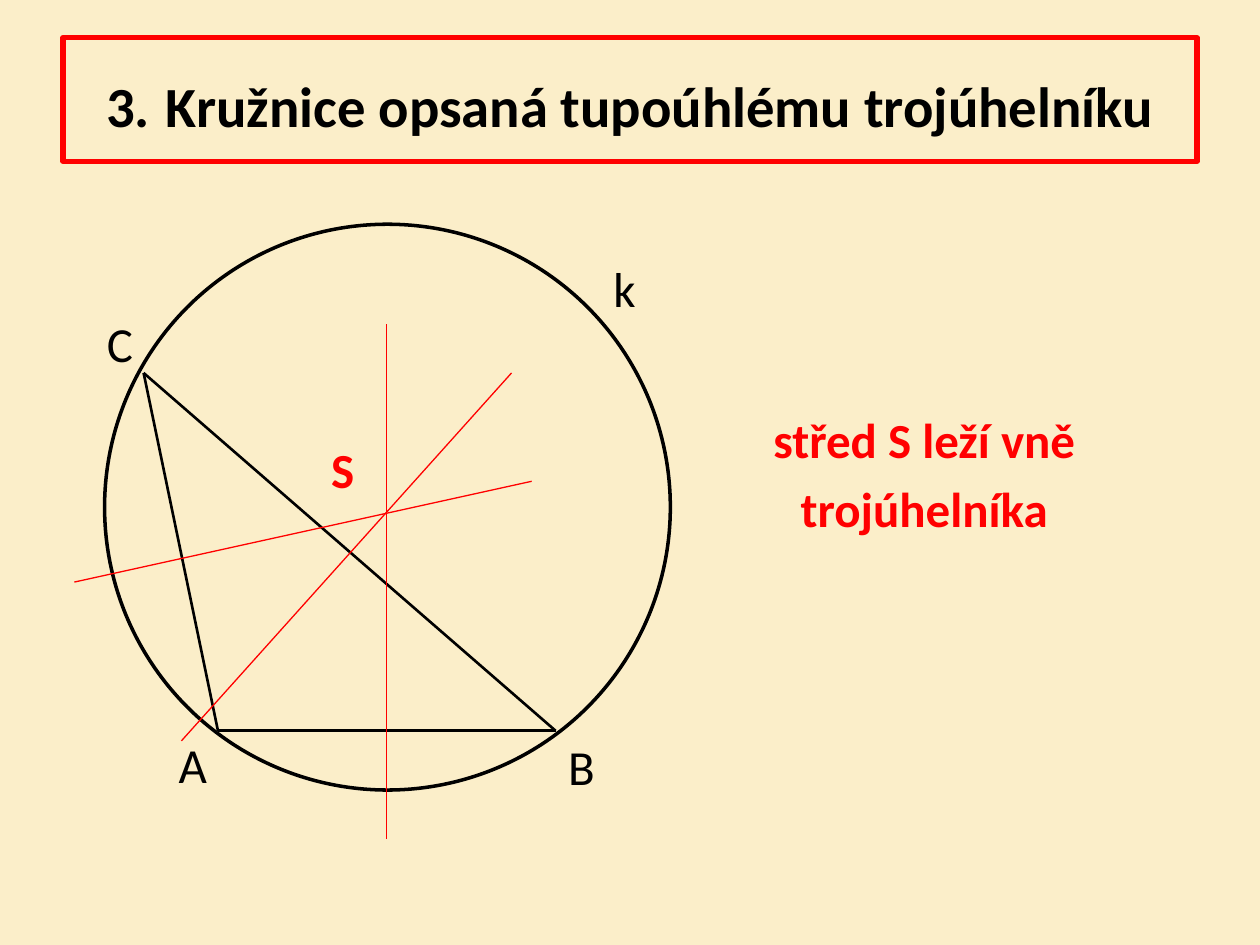
"""Build a slide on the circle circumscribed about an obtuse triangle."""
from typing import NamedTuple

from lxml.etree import SubElement
from pptx import Presentation
from pptx.dml.color import RGBColor
from pptx.enum.shapes import MSO_CONNECTOR, MSO_SHAPE
from pptx.enum.text import MSO_ANCHOR, MSO_AUTO_SIZE, PP_ALIGN
from pptx.oxml.ns import qn
from pptx.util import Inches, Pt

COLORS = {"paper": "FBEEC9", "ink": "000000", "accent": "FF0000"}
FONT = "Calibri"


class Point(NamedTuple):
    x: float
    y: float


class Segment(NamedTuple):
    start: Point
    end: Point
    color: str
    weight: float


class Label(NamedTuple):
    lines: tuple[str, ...]
    left: float
    top: float
    width: float
    height: float = 0.57
    color: str = "ink"
    bold: bool = False
    align: PP_ALIGN = PP_ALIGN.LEFT


A, B, C = Point(1.73, 5.8), Point(4.41, 5.8), Point(1.14, 2.96)
SIDES = [Segment(start, end, "ink", 1.5) for start, end in ((A, B), (A, C), (C, B))]
BISECTORS = [
    Segment(Point(*start), Point(*end), "accent", 0.75)
    for start, end in (
        ((3.07, 6.66), (3.07, 2.57)),
        ((1.44, 5.88), (4.06, 2.96)),
        ((0.59, 4.62), (4.22, 3.82)),
    )
]
LABELS = [
    Label(("A",), 1.32, 5.78, 0.43),
    Label(("C",), 0.75, 2.44, 0.41),
    Label(("k",), 4.77, 2, 0.38),
    Label(("S",), 2.53, 3.44, 0.39, color="accent", bold=True),
    Label(("B",), 4.41, 5.8, 0.42),
    Label(("střed S leží vně", "trojúhelníka"), 6.02, 3.2, 2.63, 1.14,
          "accent", True, PP_ALIGN.CENTER),
]


def rgb(name: str) -> RGBColor:
    """Return the named colour."""
    return RGBColor.from_string(COLORS[name])


def set_line(line, color: str, weight: float) -> None:
    """Give a line its colour and weight."""
    line.color.rgb = rgb(color)
    line.width = Pt(weight)


def format_title(title) -> None:
    """Place, frame and fill the title."""
    title.left, title.top = Inches(0.5), Inches(0.3)
    title.width, title.height = Inches(9), Inches(0.98)
    set_line(title.line, "accent", 3)
    frame = title.text_frame
    frame.word_wrap = True
    frame.auto_size = MSO_AUTO_SIZE.NONE
    frame.vertical_anchor = MSO_ANCHOR.MIDDLE
    heading = frame.paragraphs[0]
    heading.alignment = PP_ALIGN.CENTER
    heading.font.name = FONT
    heading.font.color.rgb = rgb("ink")
    for text, size, bold in (
        ("3.", 32.4, True),
        (" ", 39.6, False),
        ("Kružnice opsaná tupoúhlému trojúhelníku", 32.4, True),
    ):
        part = heading.add_run()
        part.text = text
        part.font.size = Pt(size)
        part.font.bold = bold


def draw_circle(shapes) -> None:
    """Draw the circumscribed circle."""
    circle = shapes.add_shape(
        MSO_SHAPE.OVAL, Inches(0.83), Inches(1.78), Inches(4.49), Inches(4.49))
    circle.shadow.inherit = False
    circle.fill.background()
    set_line(circle.line, "ink", 2)


def draw_segment(shapes, segment: Segment) -> None:
    """Draw a triangle side or a bisector."""
    ends = [Inches(value) for value in (*segment.start, *segment.end)]
    connector = shapes.add_connector(MSO_CONNECTOR.STRAIGHT, *ends)
    set_line(connector.line, segment.color, segment.weight)
    SubElement(connector._element.spPr, qn("a:effectLst"))


def draw_label(shapes, label: Label) -> None:
    """Write a point name or the conclusion."""
    box = shapes.add_textbox(
        Inches(label.left), Inches(label.top), Inches(label.width), Inches(label.height))
    frame = box.text_frame
    frame.word_wrap = False
    frame.auto_size = MSO_AUTO_SIZE.SHAPE_TO_FIT_TEXT
    frame.text = "\n".join(label.lines)
    for index, paragraph in enumerate(frame.paragraphs):
        paragraph.alignment = label.align
        paragraph.space_before = Pt(5.6 if index else 0)
        paragraph.font.name = FONT
        paragraph.font.size = Pt(28)
        paragraph.font.bold = label.bold
        paragraph.font.color.rgb = rgb(label.color)


def main() -> None:
    """Build and save the slide."""
    deck = Presentation()
    deck.slide_width, deck.slide_height = Inches(10), Inches(7.5)
    slide = deck.slides.add_slide(deck.slide_layouts[5])
    slide.background.fill.solid()
    slide.background.fill.fore_color.rgb = rgb("paper")
    format_title(slide.shapes.title)
    draw_circle(slide.shapes)
    for segment in SIDES + BISECTORS:
        draw_segment(slide.shapes, segment)
    for label in LABELS:
        draw_label(slide.shapes, label)
    deck.save("out.pptx")


if __name__ == "__main__":
    main()
